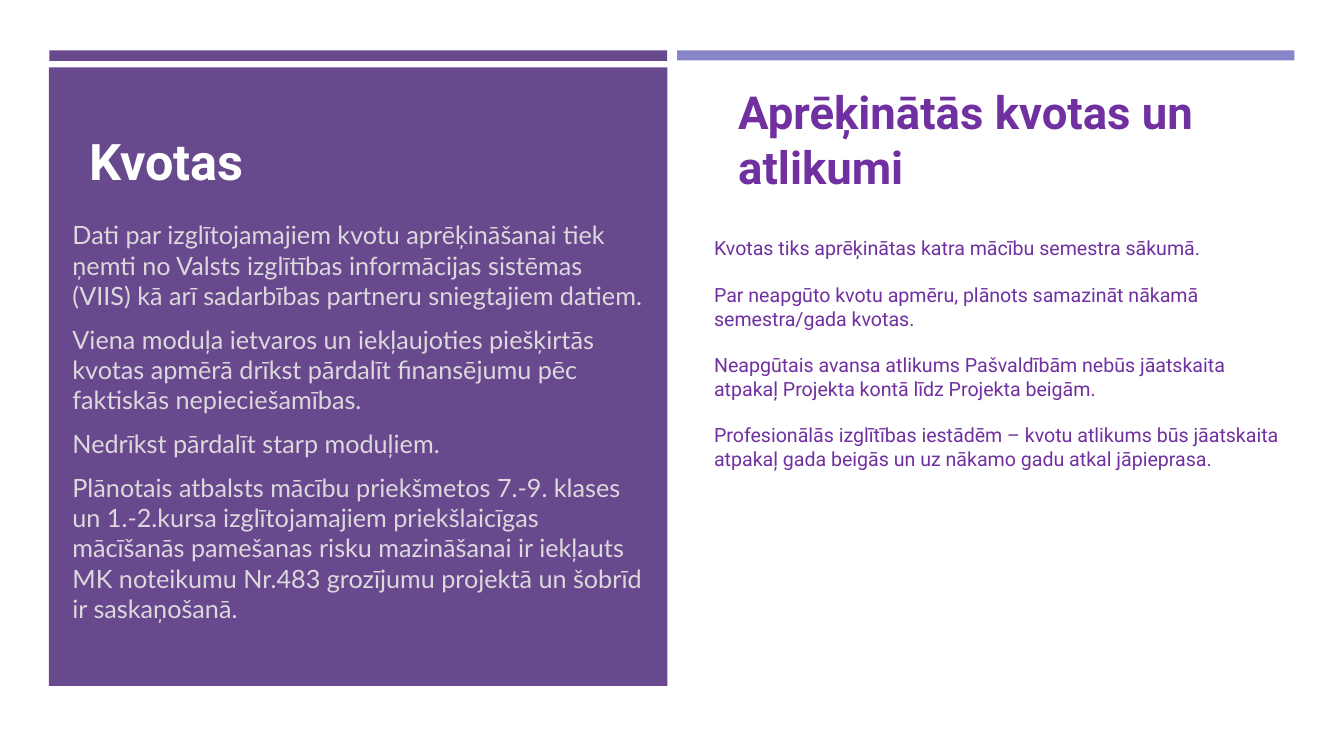
from dataclasses import dataclass

from pptx import Presentation
from pptx.dml.color import RGBColor
from pptx.enum import shapes, text
from pptx.slide import Slide
from pptx import util as u

WIDTH, HEIGHT = u.Inches(26.67), u.Inches(15)

WHITE = RGBColor(0xFF, 0xFF, 0xFF)
PLUM = RGBColor(0x68, 0x49, 0x8E)
LAVENDER = RGBColor(0x87, 0x84, 0xC7)
PALE = RGBColor(0xDC, 0xD8, 0xDC)
VIOLET = RGBColor(0x70, 0x30, 0xA0)


@dataclass(frozen=True)
class Area:
    """Left, top, width and height as percentages of the slide."""
    left: float
    top: float
    width: float
    height: float

    def lengths(self) -> tuple[int, int, int, int]:
        return (
            int(WIDTH * self.left / 100),
            int(HEIGHT * self.top / 100),
            int(WIDTH * self.width / 100),
            int(HEIGHT * self.height / 100),
        )


@dataclass(frozen=True)
class Block:
    area: Area
    color: RGBColor


@dataclass(frozen=True)
class Passage:
    area: Area
    paragraphs: tuple[str, ...]
    font: str
    size: float
    color: RGBColor
    bold: bool = False
    gap: float = 0
    anchor: text.MSO_ANCHOR = text.MSO_ANCHOR.TOP


BLOCKS = (
    Block(Area(0, 0, 100, 100), WHITE),
    Block(Area(3.64, 8.93, 46.01, 81.8), PLUM),
    Block(Area(3.67, 6.67, 45.97, 1.4), PLUM),
    Block(Area(50.39, 6.67, 45.93, 1.33), LAVENDER),
)

PASSAGES = (
    Passage(
        Area(6.26, 10.8, 40.76, 14.8), ("Kvotas",),
        "Roboto", 72, WHITE, bold=True, anchor=text.MSO_ANCHOR.BOTTOM,
    ),
    Passage(
        Area(5.02, 28.73, 43.23, 58.67),
        (
            "Dati par izglītojamajiem kvotu aprēķināšanai tiek ņemti no Valsts "
            "izglītības informācijas sistēmas (VIIS) kā arī sadarbības partneru "
            "sniegtajiem datiem.",
            "Viena moduļa ietvaros un iekļaujoties piešķirtās kvotas apmērā "
            "drīkst pārdalīt finansējumu pēc faktiskās nepieciešamības.",
            "Nedrīkst pārdalīt starp moduļiem.",
            "Plānotais atbalsts mācību priekšmetos 7.-9. klases un 1.-2.kursa "
            "izglītojamajiem priekšlaicīgas mācīšanās pamešanas risku "
            "mazināšanai ir iekļauts MK noteikumu Nr.483 grozījumu projektā un "
            "šobrīd ir saskaņošanā.",
        ),
        "Lato", 36, PALE, gap=19.5,
    ),
    Passage(
        Area(52.76, 30.93, 43.57, 32.07),
        (
            "Kvotas tiks aprēķinātas katra mācību semestra sākumā.",
            "Par neapgūto kvotu apmēru, plānots samazināt nākamā semestra/gada "
            "kvotas.",
            "Neapgūtais avansa atlikums Pašvaldībām nebūs jāatskaita atpakaļ "
            "Projekta kontā līdz Projekta beigām.",
            "Profesionālās izglītības iestādēm – kvotu atlikums būs jāatskaita "
            "atpakaļ gada beigās un uz nākamo gadu atkal jāpieprasa.",
        ),
        "Roboto", 28, VIOLET, gap=33,
    ),
    Passage(
        Area(54.56, 10.8, 42.71, 15.27), ("Aprēķinātās kvotas un atlikumi",),
        "Roboto", 65, VIOLET, bold=True,
    ),
)


def draw_block(slide: Slide, block: Block) -> None:
    rectangle = slide.shapes.add_shape(
        shapes.MSO_SHAPE.RECTANGLE, *block.area.lengths()
    )
    rectangle.shadow.inherit = False
    rectangle.fill.solid()
    rectangle.fill.fore_color.rgb = block.color
    rectangle.line.fill.background()


def draw_passage(slide: Slide, passage: Passage) -> None:
    frame = slide.shapes.add_textbox(*passage.area.lengths()).text_frame
    frame.word_wrap = True
    frame.vertical_anchor = passage.anchor
    for index, wording in enumerate(passage.paragraphs):
        paragraph = frame.add_paragraph() if index else frame.paragraphs[0]
        if index:
            paragraph.space_before = u.Pt(passage.gap)
        run = paragraph.add_run()
        run.text = wording
        run.font.name = passage.font
        run.font.size = u.Pt(passage.size)
        run.font.bold = passage.bold
        run.font.color.rgb = passage.color


def main() -> None:
    deck = Presentation()
    deck.slide_width, deck.slide_height = WIDTH, HEIGHT
    slide = deck.slides.add_slide(deck.slide_layouts[6])
    for block in BLOCKS:
        draw_block(slide, block)
    for passage in PASSAGES:
        draw_passage(slide, passage)
    deck.save("out.pptx")


if __name__ == "__main__":
    main()
